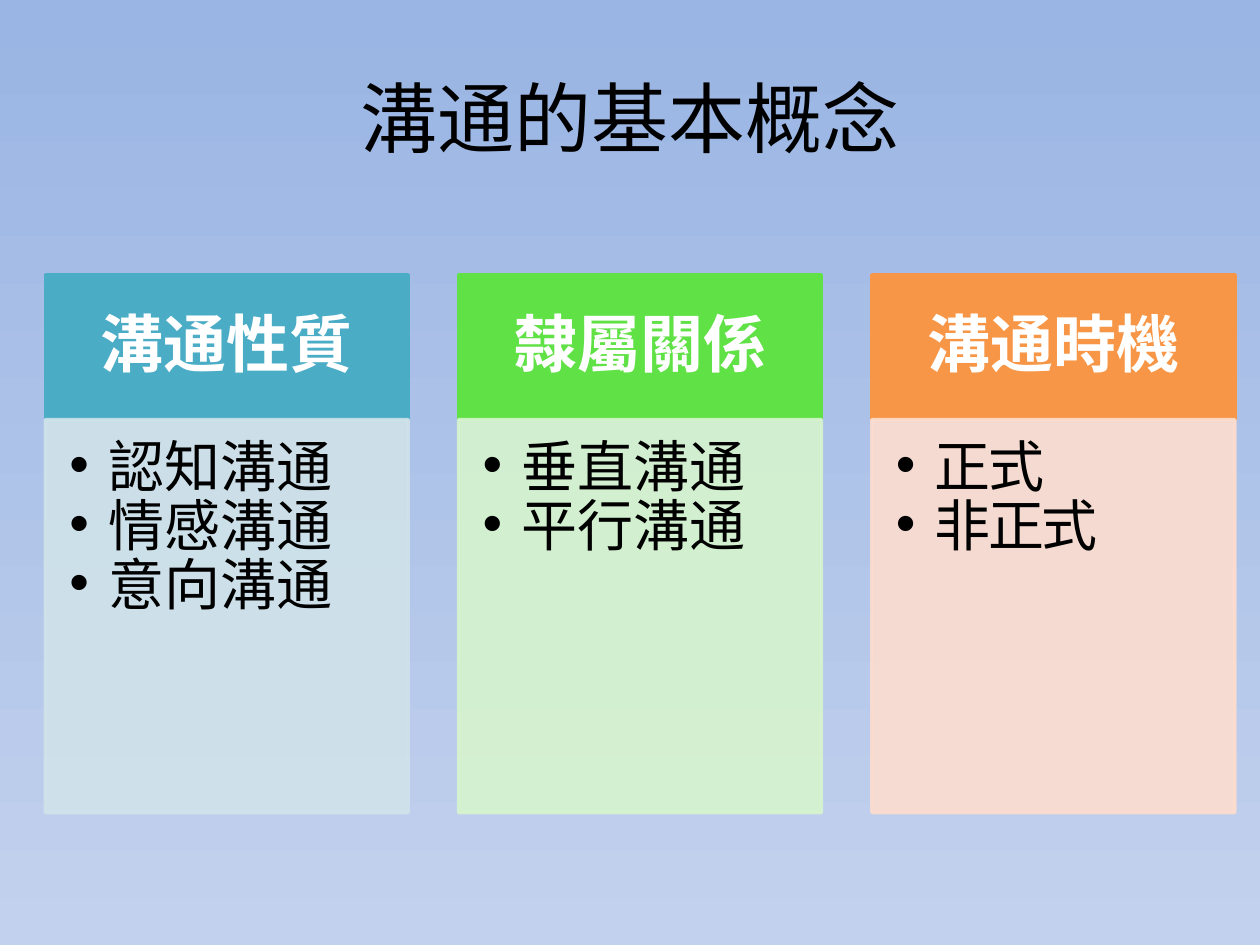
from dataclasses import dataclass

from lxml.etree import SubElement
from pptx import Presentation
from pptx.dml.color import RGBColor
from pptx.enum.shapes import MSO_SHAPE
from pptx.enum.text import MSO_ANCHOR as Anchor, PP_ALIGN as Align
from pptx.oxml.ns import qn
from pptx.util import Emu, Inches, Pt


@dataclass(frozen=True)
class Theme:
    font: str = "Noto Sans CJK SC"
    sky_top: str = "9AB5E4"
    sky_bottom: str = "C2D1ED"
    ink: str = "000000"
    white: str = "FFFFFF"
    title_size: int = 44
    heading_size: int = 36
    item_size: int = 32
    body_opacity: int = 90


THEME = Theme()

# Column grid, in inches
LEFT, PITCH, WIDTH = 0.36, 3.28, 2.88
HEAD_TOP, HEAD_HEIGHT, BODY_HEIGHT = 2.18, 1.15, 3.12

# Heading, heading fill, body fill, letter spacing, items
COLUMNS = [
    ("溝通性質", "4BACC6", "D0E3EA", 0, ["認知溝通", "情感溝通", "意向溝通"]),
    ("隸屬關係", "60E146", "D6F4CE", 0, ["垂直溝通", "平行溝通"]),
    ("溝通時機", "F79646", "FCDDCF", -1.5, ["正式", "非正式"]),
]


def set_background(page):
    fill = page.background.fill
    fill.gradient()
    fill.gradient_angle = 270
    for stop, color in zip(fill.gradient_stops, (THEME.sky_top, THEME.sky_bottom)):
        stop.color.rgb = RGBColor.from_string(color)


def style_paragraph(para, size, color, bold=False, tracking=0):
    font = para.font
    font.size, font.bold, font.name = Pt(size), bold, THEME.font
    font.color.rgb = RGBColor.from_string(color)
    props = para._p.pPr.find(qn("a:defRPr"))
    SubElement(props, qn("a:ea"), typeface=THEME.font)
    if tracking:
        props.set("spc", str(int(tracking * 100)))


def set_frame(frame, anchor, insets):
    frame.word_wrap = True
    frame.vertical_anchor = anchor
    (frame.margin_left, frame.margin_top,
     frame.margin_right, frame.margin_bottom) = map(Inches, insets)


def add_title(deck, page, text):
    margin = deck.slide_width * 0.05
    box = page.shapes.add_textbox(
        Emu(int(margin)), Emu(int(deck.slide_height * 0.04)),
        Emu(int(deck.slide_width - 2 * margin)), Inches(1.25))
    set_frame(box.text_frame, Anchor.MIDDLE, (0.1, 0.05, 0.1, 0.05))
    para = box.text_frame.paragraphs[0]
    para.text, para.alignment = text, Align.CENTER
    style_paragraph(para, THEME.title_size, THEME.ink)


def add_panel(page, left, top, height, color, opacity=100):
    panel = page.shapes.add_shape(
        MSO_SHAPE.RECTANGLE, *map(Inches, (left, top, WIDTH, height)))
    panel.shadow.inherit = False
    panel.line.width = Pt(2)
    for fill in (panel.fill, panel.line.fill):
        fill.solid()
        fill.fore_color.rgb = RGBColor.from_string(color)
    if opacity < 100:
        for swatch in panel._element.spPr.iter(qn("a:srgbClr")):
            SubElement(swatch, qn("a:alpha"), val=str(opacity * 1000))
    return panel


def add_heading(page, left, text, color):
    frame = add_panel(page, left, HEAD_TOP, HEAD_HEIGHT, color).text_frame
    set_frame(frame, Anchor.MIDDLE, (0.28, 0.16, 0.28, 0.16))
    para = frame.paragraphs[0]
    para.text, para.alignment, para.line_spacing = text, Align.CENTER, 0.9
    style_paragraph(para, THEME.heading_size, THEME.white, bold=True)


def add_bullets(page, left, items, color, tracking):
    panel = add_panel(page, left, HEAD_TOP + HEAD_HEIGHT, BODY_HEIGHT,
                      color, THEME.body_opacity)
    frame = panel.text_frame
    set_frame(frame, Anchor.TOP, (0.19, 0.22, 0.25, 0.28))
    for index, item in enumerate(items):
        para = frame.paragraphs[0] if index == 0 else frame.add_paragraph()
        para.text, para.level, para.alignment = item, 1, Align.LEFT
        para.line_spacing, para.space_after = 0.75, Pt(4.8)
        props = para._p.get_or_add_pPr()
        props.set("marL", str(Inches(0.31)))
        props.set("indent", str(-Inches(0.31)))
        SubElement(props, qn("a:buFont"), typeface="Arial")
        SubElement(props, qn("a:buChar"), char="•")
        style_paragraph(para, THEME.item_size, THEME.ink, tracking=tracking)


def main():
    deck = Presentation()
    deck.slide_width, deck.slide_height = Inches(10), Inches(7.5)
    page = deck.slides.add_slide(deck.slide_layouts[6])
    set_background(page)
    add_title(deck, page, "溝通的基本概念")

    # One heading panel over one list panel per column
    for index, (heading, strong, pale, tracking, items) in enumerate(COLUMNS):
        left = LEFT + index * PITCH
        add_heading(page, left, heading, strong)
        add_bullets(page, left, items, pale, tracking)

    deck.save("out.pptx")


if __name__ == "__main__":
    main()
